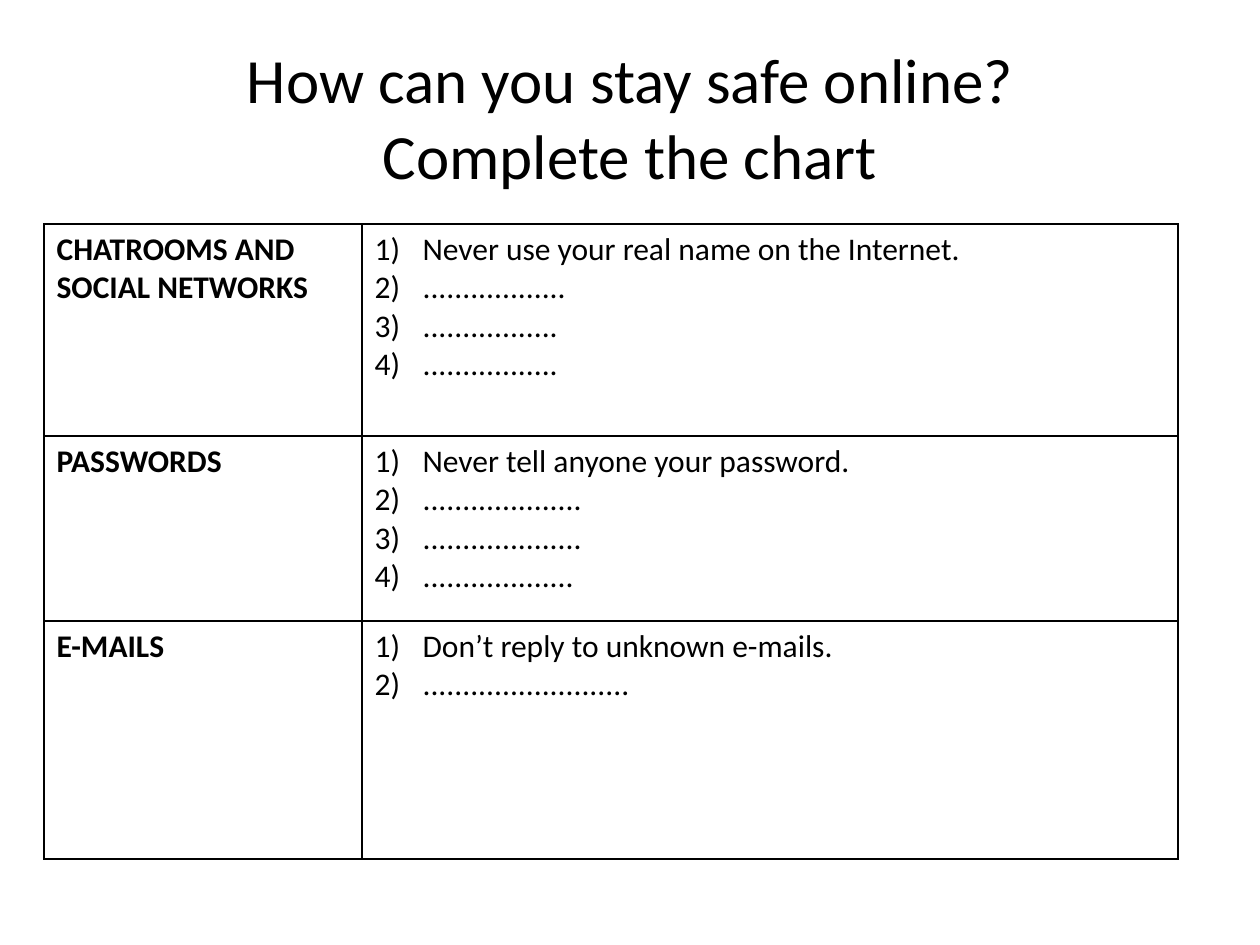
"""Build a slide with a chart of online safety rules to complete."""
from dataclasses import dataclass

import pptx
import pptx.dml.color
import pptx.enum.text
import pptx.oxml
import pptx.oxml.ns
import pptx.util

PX = 914400 / 126
FONT = "Calibri"
HEX = {"ink": "000000", "paper": "FFFFFF"}
TITLE = ("How can you stay safe online?", "Complete the chart")
COLS = (318, 816)
INDENT = 48


@dataclass
class Topic:
    name: str
    high: int
    rules: tuple[str, ...]


TOPICS = (
    Topic("CHATROOMS AND SOCIAL NETWORKS", 212,
          ("Never use your real name on the Internet.", "." * 18, "." * 17, "." * 17)),
    Topic("PASSWORDS", 185,
          ("Never tell anyone your password.", "." * 20, "." * 20, "." * 19)),
    Topic("E-MAILS", 238,
          ("Don’t reply to unknown e-mails.", "." * 26)),
)


def px(n: int) -> pptx.util.Emu:
    return pptx.util.Emu(round(n * PX))


def rgb(name: str) -> pptx.dml.color.RGBColor:
    return pptx.dml.color.RGBColor.from_string(HEX[name])


def node(xml: str):
    head, tail = xml.split(" ", 1)
    return pptx.oxml.parse_xml(f"{head} {pptx.oxml.ns.nsdecls('a')} {tail}")


def write(par, text: str, size: int, bold: bool = False) -> None:
    run = par.add_run()
    run.text = text
    run.font.name = FONT
    run.font.size = pptx.util.Pt(size)
    run.font.bold = bold
    run.font.color.rgb = rgb("ink")


def number(par) -> None:
    props = par._p.get_or_add_pPr()
    props.set("marL", str(px(INDENT)))
    props.set("indent", str(-px(INDENT)))
    props.append(node('<a:buFont typeface="+mj-lt"/>'))
    props.append(node('<a:buAutoNum type="arabicParenR"/>'))


def fill(cell, lines: tuple[str, ...], listed: bool) -> None:
    cell.fill.solid()
    cell.fill.fore_color.rgb = rgb("paper")
    props = cell._tc.get_or_add_tcPr()
    for spot, side in enumerate(("lnL", "lnR", "lnT", "lnB")):
        props.insert(spot, node(
            f'<a:{side} w="12700"><a:solidFill><a:srgbClr val="{HEX["ink"]}"/>'
            f'</a:solidFill></a:{side}>'))
    frame = cell.text_frame
    for i, line in enumerate(lines):
        par = frame.add_paragraph() if i else frame.paragraphs[0]
        if listed:
            number(par)
        write(par, line, 18, not listed)


def head(slide) -> None:
    box = slide.shapes.add_textbox(px(63), px(38), px(1134), px(157))
    frame = box.text_frame
    frame.word_wrap = True
    frame.vertical_anchor = pptx.enum.text.MSO_ANCHOR.MIDDLE
    par = frame.paragraphs[0]
    par.alignment = pptx.enum.text.PP_ALIGN.CENTER
    for i, line in enumerate(TITLE):
        if i:
            par.add_line_break()
        write(par, line, 36)


def chart(slide) -> None:
    high = sum(topic.high for topic in TOPICS)
    table = slide.shapes.add_table(
        len(TOPICS), len(COLS), px(44), px(224), px(sum(COLS)), px(high)).table
    table.first_row = table.horz_banding = False
    for col, wide in zip(table.columns, COLS):
        col.width = px(wide)
    for row, topic in zip(table.rows, TOPICS):
        row.height = px(topic.high)
        fill(row.cells[0], (topic.name,), False)
        fill(row.cells[1], topic.rules, True)


def main() -> None:
    deck = pptx.Presentation()
    deck.slide_width, deck.slide_height = px(1260), px(945)
    slide = deck.slides.add_slide(deck.slide_layouts[6])
    head(slide)
    chart(slide)
    deck.save("out.pptx")


if __name__ == "__main__":
    main()
